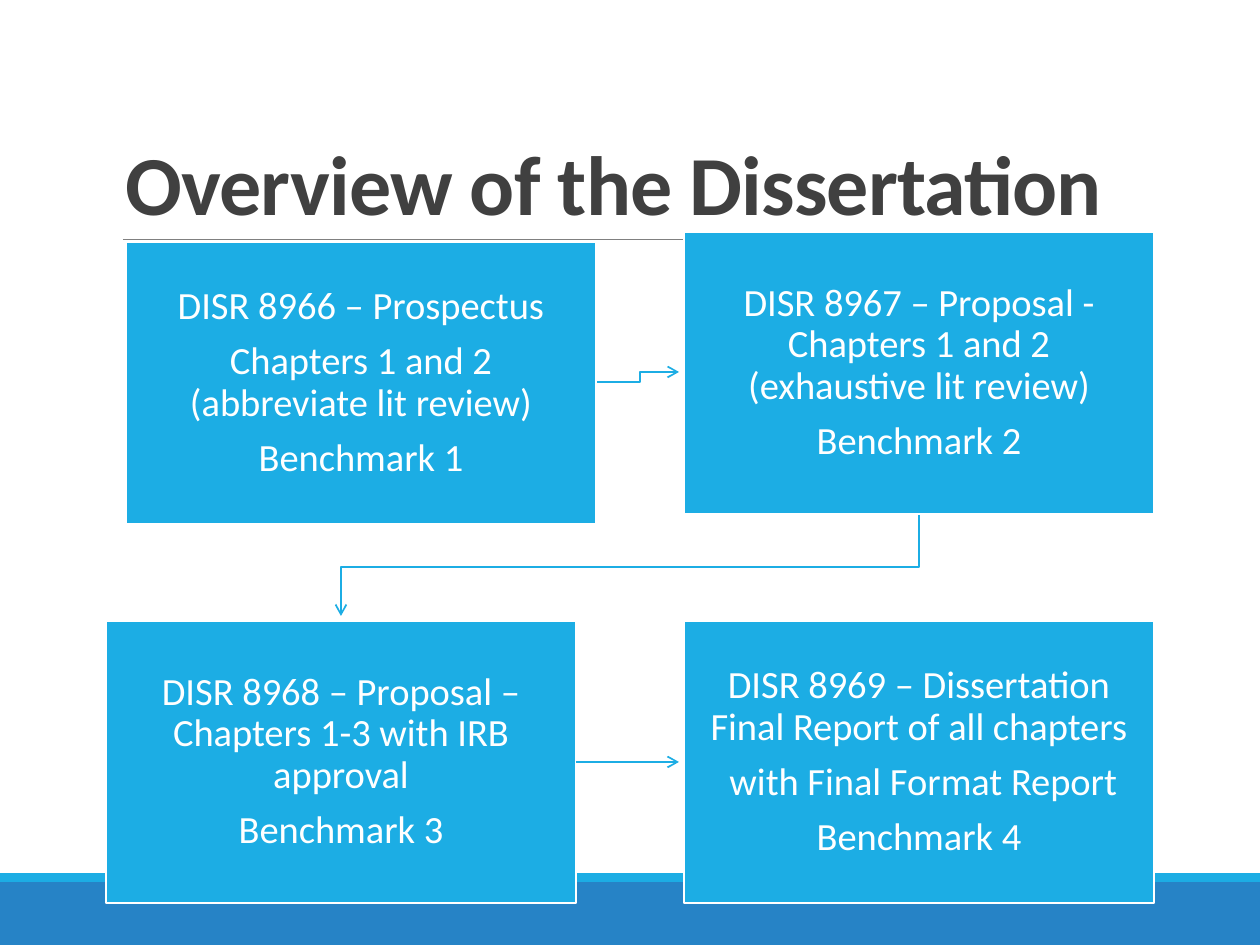
from dataclasses import dataclass

from lxml.etree import SubElement
from pptx import Presentation
from pptx.dml.color import RGBColor as Rgb
from pptx.enum.shapes import MSO_CONNECTOR as Conn, MSO_SHAPE as Form
from pptx.enum.text import MSO_ANCHOR as Anchor, PP_ALIGN as Align
from pptx.oxml.ns import qn
from pptx.util import Emu, Pt

SCALE = 914400 / 126


@dataclass(frozen=True)
class Theme:
    font: str = "Calibri"
    sky: Rgb = Rgb(0x1C, 0xAD, 0xE4)
    blue: Rgb = Rgb(0x26, 0x83, 0xC6)
    white: Rgb = Rgb(0xFF, 0xFF, 0xFF)
    dark: Rgb = Rgb(0x40, 0x40, 0x40)
    gray: Rgb = Rgb(0x80, 0x80, 0x80)
    head: int = 48
    body: int = 22


@dataclass(frozen=True)
class Box:
    x: int
    y: int
    w: int
    h: int

    @property
    def right(self):
        return self.x + self.w

    @property
    def low(self):
        return self.y + self.h

    @property
    def midx(self):
        return self.x + self.w // 2

    @property
    def midy(self):
        return self.y + self.h // 2

    def emu(self):
        return [px(n) for n in (self.x, self.y, self.w, self.h)]


THEME = Theme()
PAGE = Box(0, 0, 1260, 945)
HEAD = Box(113, 39, 1040, 200)
WIDE, HIGH = 470, 282
GAP = 5
STEPS = [
    (Box(126, 242, WIDE, HIGH),
     ["DISR 8966 – Prospectus", "Chapters 1 and 2 (abbreviate lit review)", "Benchmark 1"]),
    (Box(684, 232, WIDE, HIGH),
     ["DISR 8967 – Proposal - Chapters 1 and 2 (exhaustive lit review)", "Benchmark 2"]),
    (Box(106, 621, WIDE, HIGH),
     ["DISR 8968 – Proposal – Chapters 1-3 with IRB approval", "Benchmark 3"]),
    (Box(684, 621, WIDE, HIGH),
     ["DISR 8969 – Dissertation Final Report of all chapters",
      " with Final Format Report", "Benchmark 4"]),
]


def px(n):
    return Emu(round(n * SCALE))


def add_run(para, text, size, color, bold=False):
    run = para.add_run()
    run.text = text
    font = run.font
    font.name, font.size, font.bold = THEME.font, Pt(size), bold
    font.color.rgb = color
    return run


def add_rect(slide, box, color):
    rect = slide.shapes.add_shape(Form.RECTANGLE, *box.emu())
    rect.shadow.inherit = False
    rect.fill.solid()
    rect.fill.fore_color.rgb = color
    rect.line.fill.background()
    return rect


def add_line(slide, start, end, color, width):
    line = slide.shapes.add_connector(Conn.STRAIGHT, *map(px, (*start, *end)))
    SubElement(line._element.spPr, qn("a:effectLst"))
    line.line.color.rgb = color
    line.line.width = Pt(width)
    return line


def add_tip(shape):
    SubElement(shape.line._get_or_add_ln(), qn("a:tailEnd"), type="arrow")


def add_bend(slide, points):
    start, *rest = points
    form = slide.shapes.build_freeform(*start, scale=SCALE)
    form.add_line_segments(rest, close=False)
    bend = form.convert_to_shape()
    bend.shadow.inherit = False
    bend.fill.background()
    bend.line.color.rgb = THEME.sky
    bend.line.width = Pt(1)
    add_tip(bend)


def add_foot(slide, box):
    edge = 9
    add_rect(slide, Box(box.x, box.y + edge, box.w, box.h - edge), THEME.blue)
    add_rect(slide, Box(box.x, box.y, box.w, edge), THEME.sky)


def add_title(slide, box, text):
    title = slide.shapes.title
    title.left, title.top, title.width, title.height = box.emu()
    frame = title.text_frame
    frame.vertical_anchor = Anchor.BOTTOM
    frame.word_wrap = True
    para = frame.paragraphs[0]
    para.alignment = Align.LEFT
    para.line_spacing = 0.85
    run = add_run(para, text, THEME.head, THEME.dark, True)
    run._r.get_or_add_rPr().set("spc", "-50")
    add_line(slide, (box.x + 10, box.low), (box.right, box.low), THEME.gray, 0.5)


def add_step(slide, box, lines):
    step = add_rect(slide, box, THEME.sky)
    step.line.color.rgb = THEME.white
    step.line.width = Pt(1.25)
    frame = step.text_frame
    frame.word_wrap = True
    frame.vertical_anchor = Anchor.MIDDLE
    frame.margin_left = frame.margin_right = px(21)
    frame.margin_top = frame.margin_bottom = px(21)
    for i, text in enumerate(lines):
        para = frame.add_paragraph() if i else frame.paragraphs[0]
        para.alignment = Align.CENTER
        para.line_spacing = 0.9
        para.space_after = Pt(THEME.body * 0.35)
        add_run(para, text, THEME.body, THEME.white)
    return step


def add_flow(slide, steps):
    one, two, three, four = [box for box, _ in steps]
    turn = (one.right + two.x) // 2
    add_bend(slide, [(one.right, one.midy - 1), (turn, one.midy - 1),
                     (turn, two.midy - 1), (two.x - GAP, two.midy - 1)])
    fold = (two.low + three.y) // 2
    add_bend(slide, [(two.midx, two.low), (two.midx, fold),
                     (three.midx, fold), (three.midx, three.y - GAP)])
    cards = [add_step(slide, box, lines) for box, lines in steps]
    last = add_line(slide, (three.right, three.midy), (four.x - GAP, four.midy), THEME.sky, 1)
    last.begin_connect(cards[2], 3)
    add_tip(last)


def main():
    deck = Presentation()
    deck.slide_width, deck.slide_height = px(PAGE.w), px(PAGE.h)
    slide = deck.slides.add_slide(deck.slide_layouts[5])
    add_foot(slide, Box(0, 873, PAGE.w, 72))
    add_title(slide, HEAD, "Overview of the Dissertation")
    add_flow(slide, STEPS)
    deck.save("out.pptx")


if __name__ == "__main__":
    main()
